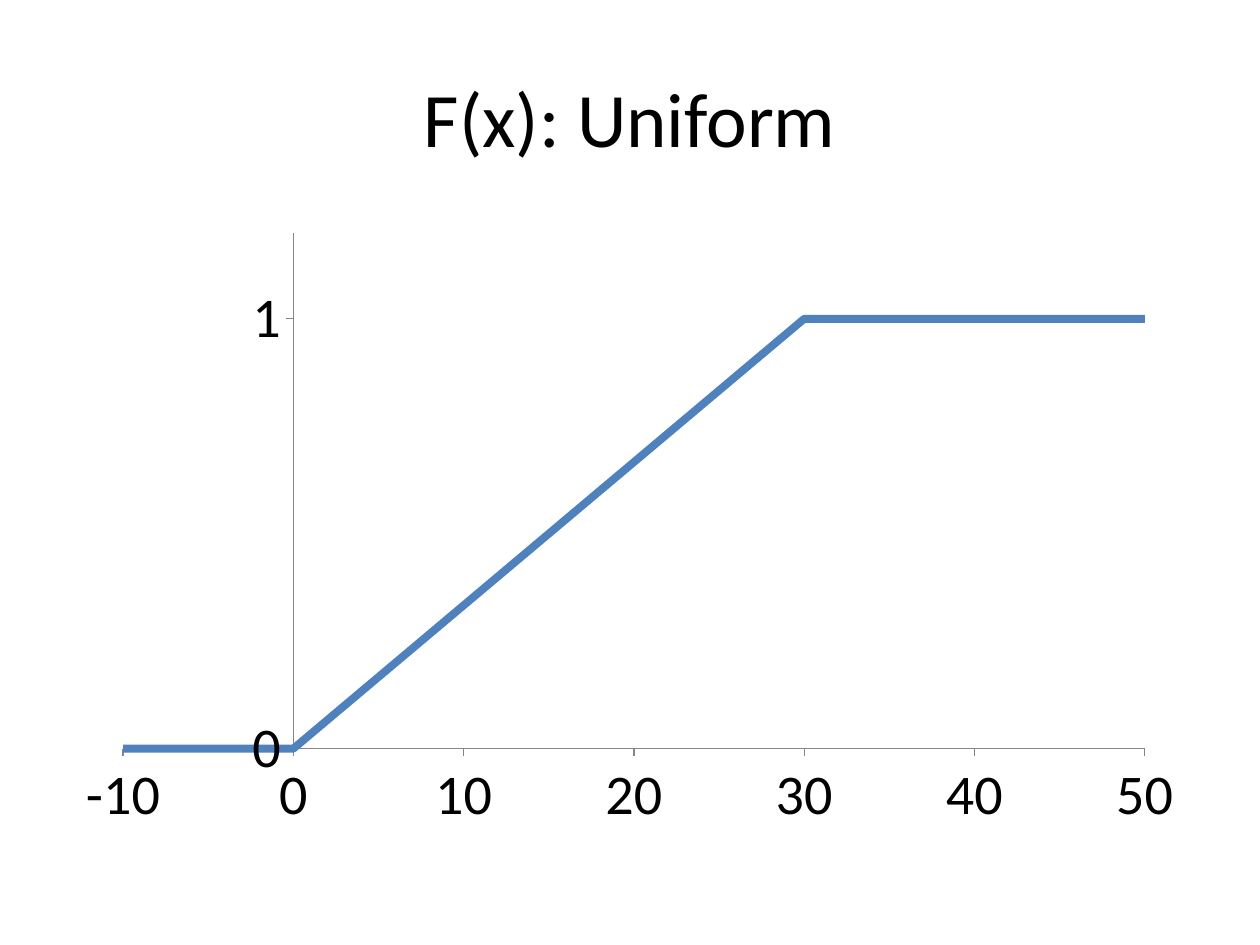
import pptx
import pptx.chart.data
import pptx.dml.color
import pptx.enum.chart
import pptx.enum.text
import pptx.oxml
import pptx.oxml.ns
import pptx.util

BLACK = pptx.dml.color.RGBColor(0x00, 0x00, 0x00)
GRAY = pptx.dml.color.RGBColor(0x86, 0x86, 0x86)
BLUE = pptx.dml.color.RGBColor(0x4F, 0x81, 0xBD)
FONT = "Calibri"

presentation = pptx.Presentation()
presentation.slide_width = pptx.util.Inches(10)
presentation.slide_height = pptx.util.Inches(7.5)
slide = presentation.slides.add_slide(presentation.slide_layouts[6])

margin = int(presentation.slide_width * 0.05)
content_width = presentation.slide_width - 2 * margin


def add_text(text, *, top, height, size, color):
    shape = slide.shapes.add_textbox(margin, top, content_width, height)
    frame = shape.text_frame
    frame.word_wrap = True
    frame.vertical_anchor = pptx.enum.text.MSO_ANCHOR.MIDDLE
    paragraph = frame.paragraphs[0]
    paragraph.alignment = pptx.enum.text.PP_ALIGN.CENTER
    run = paragraph.add_run()
    run.text = text
    run.font.name = FONT
    run.font.size = pptx.util.Pt(size)
    run.font.color.rgb = color


add_text(
    "F(x): Uniform",
    top=int(presentation.slide_height * 0.04),
    height=pptx.util.Inches(1.25),
    size=44,
    color=BLACK,
)

chart_data = pptx.chart.data.XyChartData()
distribution = chart_data.add_series("Series 1")
for x, probability in [(-10, 0), (0, 0), (30, 1), (50, 1)]:
    distribution.add_data_point(x, probability)

chart = slide.shapes.add_chart(
    pptx.enum.chart.XL_CHART_TYPE.XY_SCATTER_LINES_NO_MARKERS,
    margin,
    pptx.util.Inches(1.75),
    content_width,
    int(presentation.slide_height * 0.66),
    chart_data,
).chart
chart.has_legend = False
chart.has_title = False
chart.font.name = FONT
chart.font.size = pptx.util.Pt(10)
chart.font.color.rgb = BLACK
chart.plots[0].vary_by_categories = False

axes = [(chart.category_axis, -10, 50, 10), (chart.value_axis, 0, 1.2, 1)]
for axis, minimum, maximum, step in axes:
    axis.minimum_scale = minimum
    axis.maximum_scale = maximum
    axis.major_unit = step
    axis.has_major_gridlines = False
    axis.has_title = False
    axis.major_tick_mark = pptx.enum.chart.XL_TICK_MARK.OUTSIDE
    axis.minor_tick_mark = pptx.enum.chart.XL_TICK_MARK.NONE
    axis.tick_label_position = pptx.enum.chart.XL_TICK_LABEL_POSITION.NEXT_TO_AXIS
    axis.tick_labels.number_format = "General"
    axis.tick_labels.number_format_is_linked = False
    axis.tick_labels.font.name = FONT
    axis.tick_labels.font.size = pptx.util.Pt(32)
    axis.tick_labels.font.color.rgb = BLACK
    axis.format.line.color.rgb = GRAY
    axis.format.line.width = pptx.util.Pt(0.75)

series = chart.plots[0].series[0]
series.smooth = False
series.marker.style = pptx.enum.chart.XL_MARKER_STYLE.NONE
series.format.line.color.rgb = BLUE
series.format.line.width = pptx.util.Pt(4.5)

plot_area = chart.plots[0]._element.getparent()
for old_layout in plot_area.findall(pptx.oxml.ns.qn("c:layout")):
    plot_area.remove(old_layout)
layout = pptx.oxml.parse_xml(
    f'<c:layout {pptx.oxml.ns.nsdecls("c")}><c:manualLayout>'
    '<c:layoutTarget val="inner"/><c:xMode val="edge"/><c:yMode val="edge"/>'
    '<c:x val="0.053"/><c:y val="0.02"/><c:w val="0.901"/><c:h val="0.827"/>'
    "</c:manualLayout></c:layout>"
)
plot_area.insert(0, layout)

presentation.save("out.pptx")
